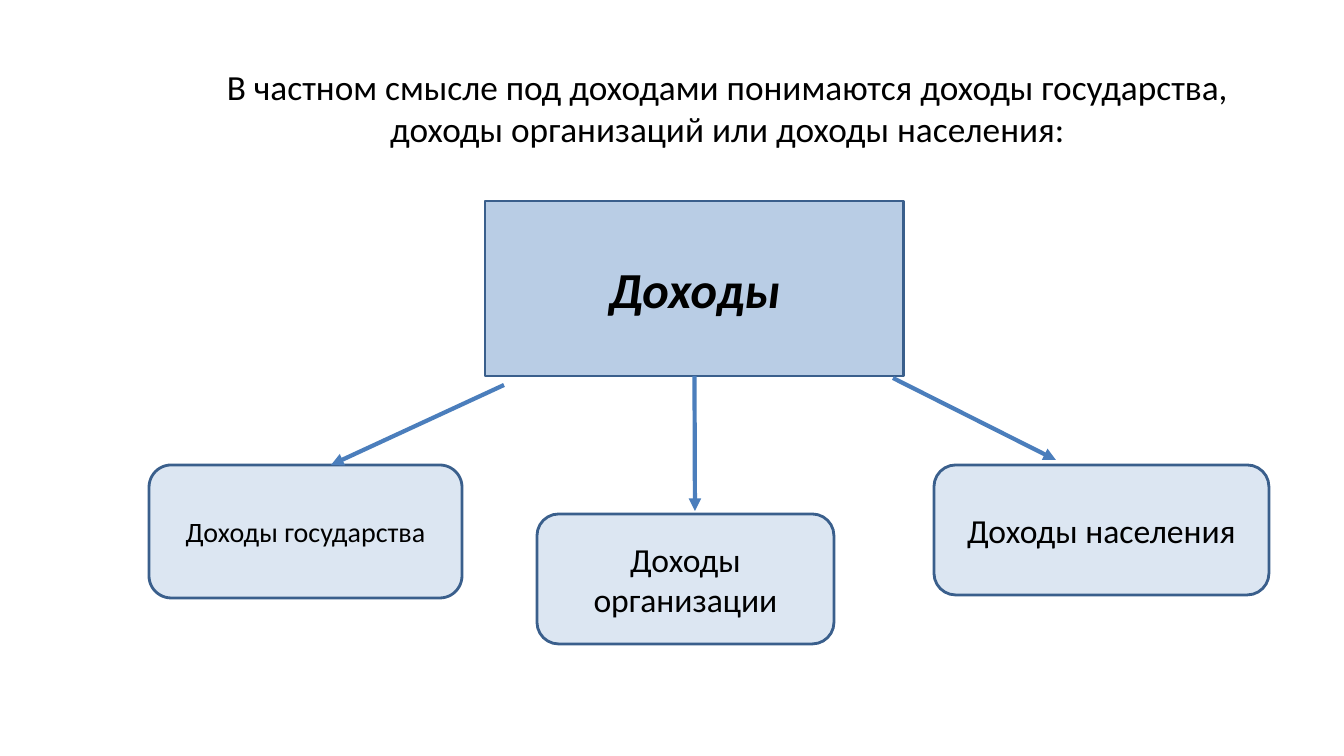
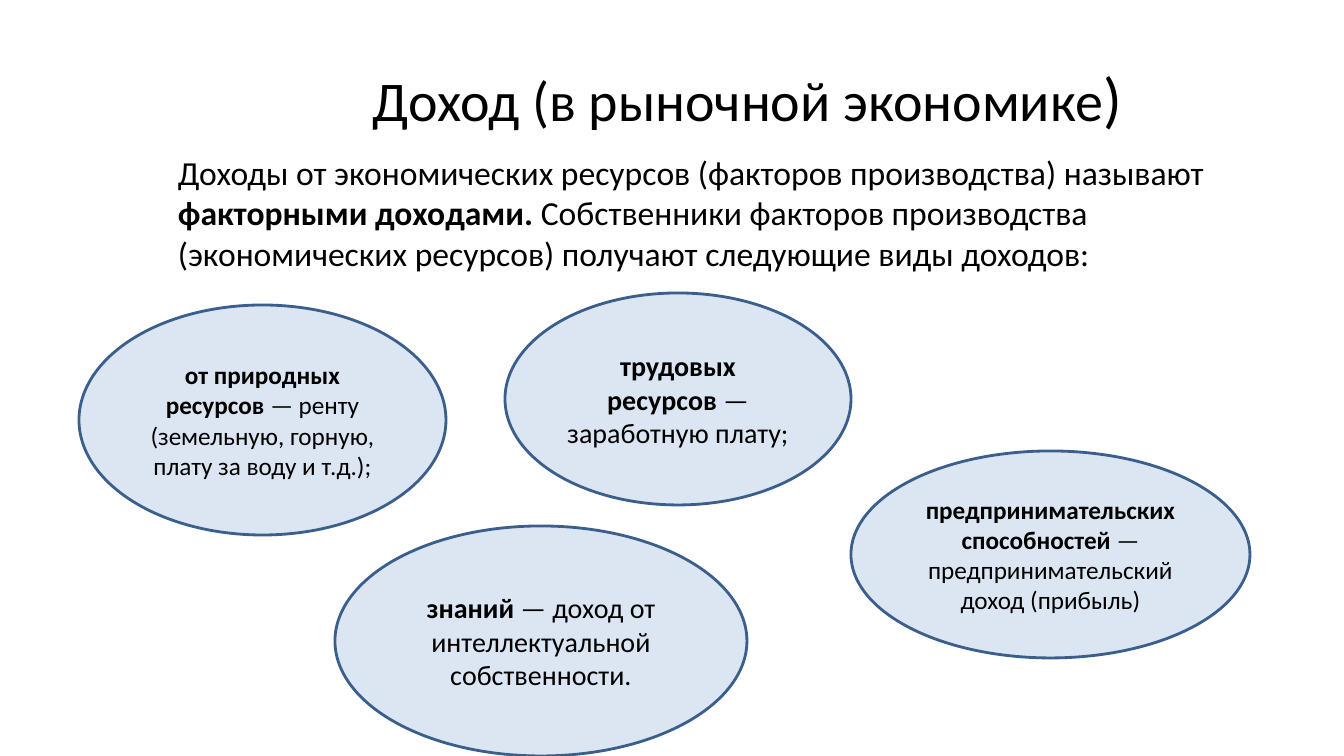
"""Build two slides on kinds of income and factor incomes."""
from typing import NamedTuple, Optional

from lxml import etree
from pptx import Presentation
from pptx import util as u
from pptx.dml.color import RGBColor
from pptx.enum import shapes, text
from pptx.oxml.ns import qn

EMU_PER_PX = 914400 / 100.8
FONT = "Calibri"
INK = "000000"
OUTLINE = "3A5F8C"
ARROW = "4B7EBC"
PALE = "DCE6F2"
MEDIUM = "B9CDE5"

RECT = shapes.MSO_SHAPE.RECTANGLE
ROUNDED = shapes.MSO_SHAPE.ROUNDED_RECTANGLE
OVAL = shapes.MSO_SHAPE.OVAL


class Box(NamedTuple):
    left: int
    top: int
    width: int
    height: int


class Run(NamedTuple):
    words: str
    size: float
    bold: bool = False
    italic: bool = False


class Node(NamedTuple):
    box: Box
    runs: list[Run]
    kind: shapes.MSO_SHAPE = ROUNDED
    fill: str = PALE


class Arrow(NamedTuple):
    start: tuple[int, int]
    end: tuple[int, int]


def px(length: int) -> int:
    return u.Emu(round(length * EMU_PER_PX))


def color(code: str) -> RGBColor:
    return RGBColor.from_string(code)


def write(frame, runs: list[Run], centred: bool = True, before: float = 0) -> None:
    frame.word_wrap = True
    frame.vertical_anchor = text.MSO_ANCHOR.MIDDLE if centred else text.MSO_ANCHOR.TOP
    paragraph = frame.paragraphs[0]
    paragraph.alignment = text.PP_ALIGN.CENTER if centred else text.PP_ALIGN.LEFT
    paragraph.space_before = u.Pt(before)
    for part in runs:
        run = paragraph.add_run()
        run.text = part.words
        run.font.name = FONT
        run.font.size = u.Pt(part.size)
        run.font.bold = part.bold
        run.font.italic = part.italic
        run.font.color.rgb = color(INK)


def add_text(slide, box: Box, runs: list[Run], centred: bool = True, before: float = 0) -> None:
    label = slide.shapes.add_textbox(*map(px, box))
    write(label.text_frame, runs, centred, before)


def add_node(slide, node: Node):
    shape = slide.shapes.add_shape(node.kind, *map(px, node.box))
    shape.shadow.inherit = False
    shape.fill.solid()
    shape.fill.fore_color.rgb = color(node.fill)
    shape.line.color.rgb = color(OUTLINE)
    shape.line.width = u.Pt(2)
    write(shape.text_frame, node.runs)
    return shape


def add_arrow(slide, arrow: Arrow, source: Optional[object] = None) -> None:
    connector = slide.shapes.add_connector(
        shapes.MSO_CONNECTOR.STRAIGHT, *map(px, arrow.start + arrow.end))
    connector.line.color.rgb = color(ARROW)
    connector.line.width = u.Pt(3)
    if source is not None:
        connector.begin_connect(source, 2)
    properties = connector._element.spPr
    etree.SubElement(properties.find(qn("a:ln")), qn("a:tailEnd"), type="triangle")
    etree.SubElement(properties, qn("a:effectLst"))


INCOME = Node(Box(485, 201, 419, 175), [Run("Доходы", 36, True, True)], RECT, MEDIUM)
RECIPIENTS = [
    Node(Box(149, 465, 313, 133), [Run("Доходы государства", 20)]),
    Node(Box(537, 514, 297, 130), [Run("Доходы организации", 24)]),
    Node(Box(934, 465, 335, 130), [Run("Доходы населения", 24)]),
]
TO_ORGANISATION = Arrow((695, 376), (695, 511))
SIDE_ARROWS = [
    Arrow((504, 385), (331, 465)),
    Arrow((893, 378), (1056, 460)),
]


def factor(box: Box, size: int, resource: str, income: str) -> Node:
    return Node(box, [Run(f"{resource} ", size, True), Run(f"— {income}", size)], OVAL)


FACTORS = [
    factor(Box(79, 305, 367, 230), 18, "от природных ресурсов",
           "ренту (земельную, горную, плату за воду и т.д.);"),
    factor(Box(505, 293, 346, 212), 20, "трудовых ресурсов", "заработную плату;"),
    factor(Box(851, 451, 399, 207), 18, "предпринимательских способностей",
           "предпринимательский доход (прибыль)"),
    factor(Box(335, 526, 412, 230), 20, "знаний",
           "доход от интеллектуальной собственности."),
]


def build_recipients(slide) -> None:
    add_text(slide, Box(185, 57, 1085, 101), [
        Run("В частном смысле под доходами понимаются доходы государства, "
            "доходы организаций или доходы населения:", 25.2)])
    income = add_node(slide, INCOME)
    for recipient in RECIPIENTS:
        add_node(slide, recipient)
    add_arrow(slide, TO_ORGANISATION, income)
    for arrow in SIDE_ARROWS:
        add_arrow(slide, arrow)


def build_factors(slide) -> None:
    add_text(slide, Box(256, 46, 983, 101), [
        Run("Доход (в рыночной экономике", 40), Run(")", 44)])
    add_text(slide, Box(168, 147, 1067, 157), [
        Run("Доходы от экономических ресурсов (факторов производства) называют ", 24),
        Run("факторными доходами. ", 24, True),
        Run("Собственники факторов производства (экономических ресурсов) "
            "получают следующие виды доходов:", 24),
    ], centred=False, before=2)
    for node in FACTORS:
        add_node(slide, node)


def main() -> None:
    deck = Presentation()
    deck.slide_width, deck.slide_height = px(1344), px(756)
    for build in (build_recipients, build_factors):
        build(deck.slides.add_slide(deck.slide_layouts[6]))
    deck.save("out.pptx")


if __name__ == "__main__":
    main()
